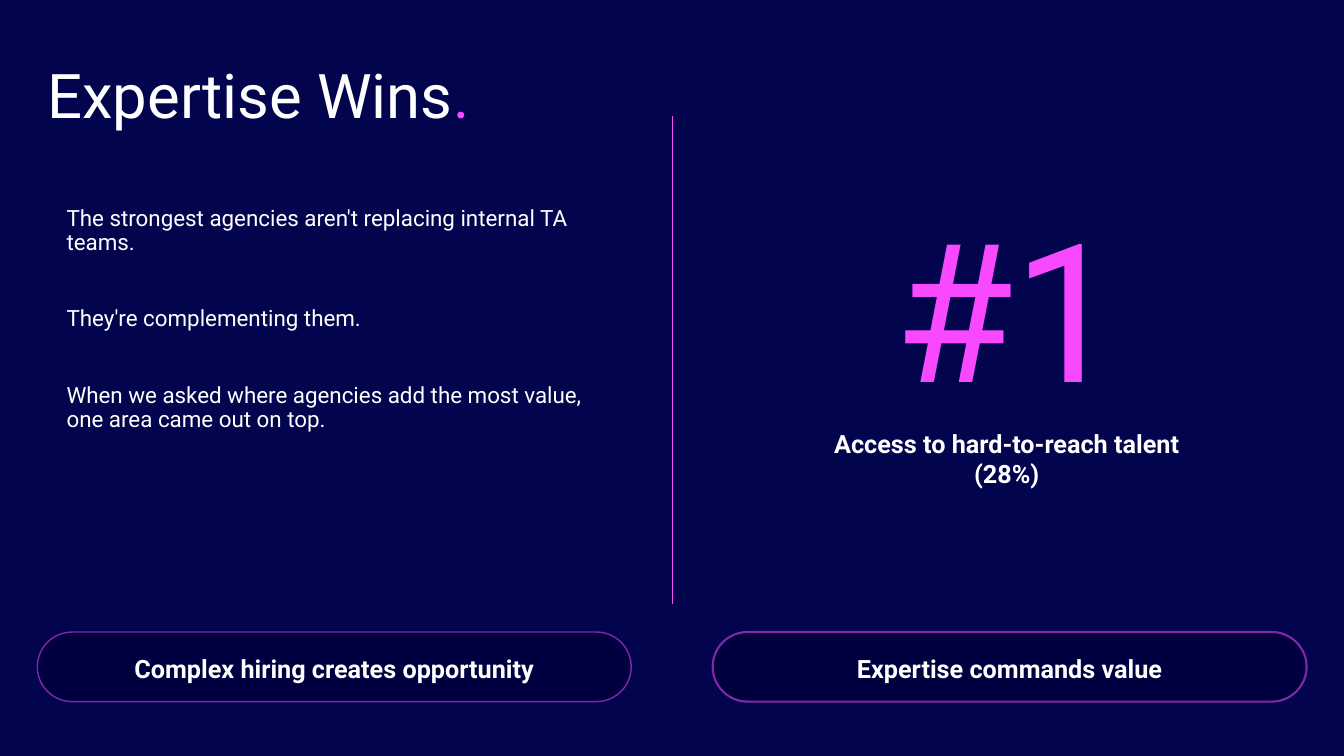
from lxml import etree
from pptx import Presentation
from pptx.dml.color import RGBColor
from pptx.enum.shapes import MSO_CONNECTOR as Connector, MSO_SHAPE as Shape
from pptx.enum.text import MSO_ANCHOR as Anchor, MSO_AUTO_SIZE as AutoSize, PP_ALIGN as Align
from pptx.oxml.ns import qn
from pptx.util import Inches, Pt

COLORS = {"navy": "02044E", "pill": "000040", "pink": "F949FF", "white": "FFFFFF"}
FONT = "Roboto"
WIDTH, HEIGHT = Inches(13.33), Inches(7.5)

# Pill geometry, in percent of the slide size
MARGIN = 2.78
PILL_TOP, PILL_WIDTH, PILL_HEIGHT = 83.6, 44.19, 9.2

BODY = [
    "The strongest agencies aren't replacing internal TA teams.",
    "They're complementing them.",
    "When we asked where agencies add the most value, one area came out on top.",
]


def color(name):
    return RGBColor.from_string(COLORS[name])


def across(percent):
    return round(WIDTH * percent / 100)


def down(percent):
    return round(HEIGHT * percent / 100)


def box(left, top, width, height):
    """Turn percent of the slide size into lengths."""
    return across(left), down(top), across(width), down(height)


def place(shape, left, top, width, height):
    shape.left, shape.top, shape.width, shape.height = box(left, top, width, height)


def style(paragraph, size, name="white", bold=False, align=Align.CENTER):
    paragraph.alignment = align
    font = paragraph.font
    font.name, font.size, font.bold = FONT, Pt(size), bold
    font.color.rgb = color(name)


def add_title(slide, text, accent):
    title = slide.shapes.title
    place(title, MARGIN, 4.67, 85.45, 16.8)
    frame = title.text_frame
    frame.auto_size, frame.vertical_anchor = AutoSize.NONE, Anchor.MIDDLE
    paragraph = frame.paragraphs[0]
    paragraph.line_spacing = 0.9
    paragraph.add_run().text = text
    mark = paragraph.add_run()
    mark.text = accent
    mark.font.color.rgb = color("pink")
    style(paragraph, 44, align=Align.LEFT)


def add_body(slide, lines):
    body = slide.placeholders[1]
    place(body, 4.2, 26.67, 41.41, 66.27)
    frame = body.text_frame
    frame.auto_size, frame.vertical_anchor = AutoSize.NONE, Anchor.TOP
    frame.text = "\n".join(lines)
    for index, paragraph in enumerate(frame.paragraphs):
        paragraph.line_spacing = 0.9
        paragraph.space_before = Pt(37.5 if index else 0)
        properties = paragraph._p.get_or_add_pPr()
        properties.set("marL", "0")
        properties.set("indent", "0")
        etree.SubElement(properties, qn("a:buNone"))
        style(paragraph, 16, align=Align.LEFT)


def add_label(slide, text, area, size, name="white", bold=False):
    frame = slide.shapes.add_textbox(*box(*area)).text_frame
    frame.word_wrap = True
    frame.text = text
    style(frame.paragraphs[0], size, name, bold)


def add_pill(slide, text, left, line_width):
    pill = slide.shapes.add_shape(
        Shape.ROUNDED_RECTANGLE, *box(left, PILL_TOP, PILL_WIDTH, PILL_HEIGHT))
    pill.adjustments[0] = 0.5
    pill.shadow.inherit = False
    pill.fill.solid()
    pill.fill.fore_color.rgb = color("pill")
    pill.line.width = Pt(line_width)
    pill.line.color.rgb = color("pink")
    # Half-transparent outline
    outline = pill.line.fill._xPr.find(".//" + qn("a:srgbClr"))
    etree.SubElement(outline, qn("a:alpha")).set("val", "53000")
    frame = pill.text_frame
    frame.word_wrap, frame.vertical_anchor = True, Anchor.MIDDLE
    frame.margin_top = Inches(0.08)
    frame.text = text
    style(frame.paragraphs[0], 18, bold=True)


def add_divider(slide, x, top, bottom):
    line = slide.shapes.add_connector(
        Connector.STRAIGHT, across(x), down(top), across(x), down(bottom))
    line.line.color.rgb = color("pink")
    line.line.width = Pt(0.5)
    etree.SubElement(line._element.spPr, qn("a:effectLst"))


def main():
    presentation = Presentation()
    presentation.slide_width, presentation.slide_height = WIDTH, HEIGHT
    slide = presentation.slides.add_slide(presentation.slide_layouts[1])
    background = slide.background.fill
    background.solid()
    background.fore_color.rgb = color("navy")

    # Left half: title and argument
    add_title(slide, "Expertise Wins", ".")
    add_body(slide, BODY)

    # Right half: headline figure
    add_label(slide, "#1", (50, 24.4, 50, 32.27), 138, "pink")
    add_label(slide, "Access to hard-to-reach talent (28%)",
              (59.94, 56, 29.93, 9.47), 18, bold=True)
    add_divider(slide, 50, 15.33, 79.87)

    # Takeaways, mirrored about the centre
    add_pill(slide, "Complex hiring creates opportunity", MARGIN, 1)
    add_pill(slide, "Expertise commands value", 100 - MARGIN - PILL_WIDTH, 1.5)

    presentation.save("out.pptx")


if __name__ == "__main__":
    main()
